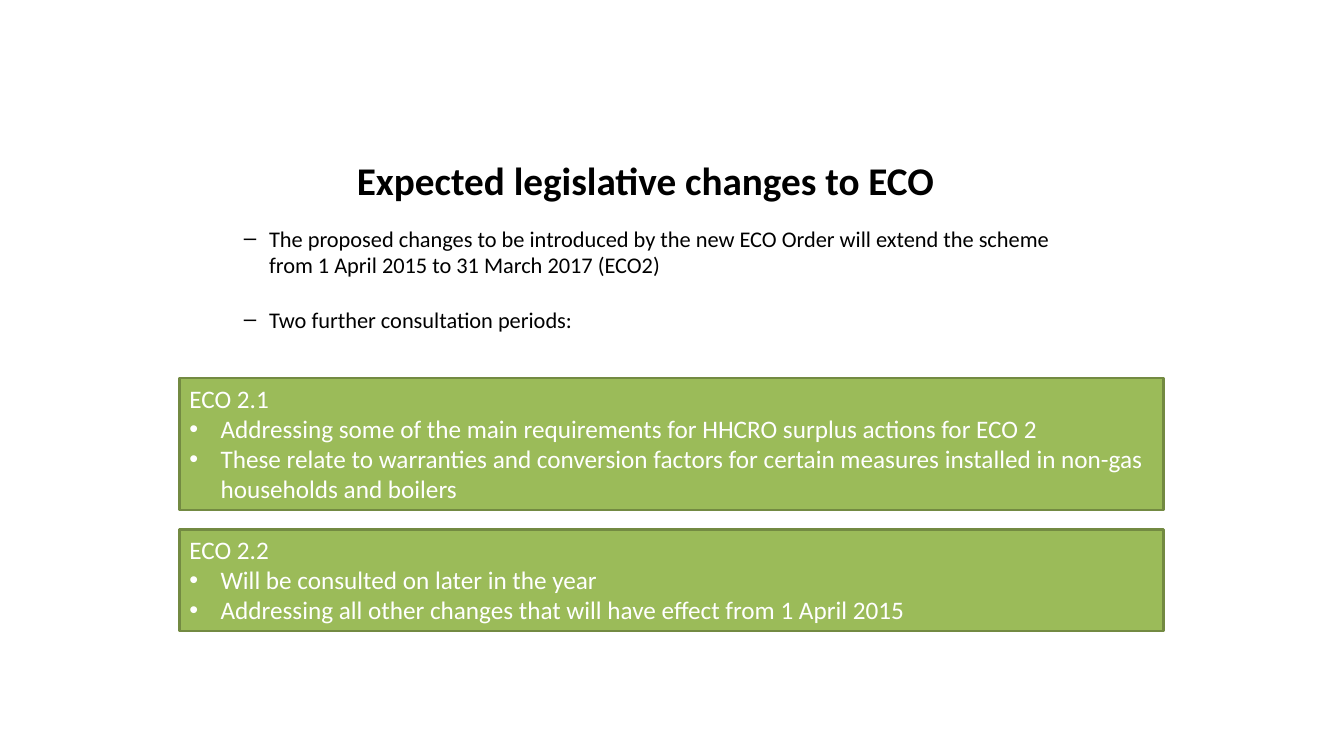
from pptx import Presentation
from pptx.dml.color import RGBColor
from pptx.enum.shapes import MSO_SHAPE as SHAPE
from pptx.enum.text import MSO_ANCHOR as ANCHOR, MSO_AUTO_SIZE as AUTO, PP_ALIGN as ALIGN
from pptx.oxml.ns import qn
from pptx.util import Inches, Pt
from lxml import etree


def rgb(value):
    return RGBColor.from_string(value)


def assign(target, values):
    for name, value in values.items():
        setattr(target, name, value)


class SlideBuilder:
    FONT = "Calibri"
    BLACK, WHITE = "000000", "FFFFFF"
    GREEN, DARK_GREEN = "9BBB59", "738A42"

    def __init__(self, prs):
        self.slide = prs.slides.add_slide(prs.slide_layouts[5])

    def place(self, sp, box):
        assign(sp, dict(zip(("left", "top", "width", "height"), map(Inches, box))))

    def paragraph(self, p, text, size, color, bold=False, bullet=None,
                  margin=0, hanging=0, align=ALIGN.LEFT, gap=0):
        pPr = p._p.get_or_add_pPr()
        pPr.set("marL", str(Inches(margin)))
        pPr.set("indent", str(-Inches(hanging)))
        assign(p, {"alignment": align, "space_before": Pt(gap)})
        if bullet:
            etree.SubElement(pPr, qn("a:buFont")).set("typeface", "Arial")
            etree.SubElement(pPr, qn("a:buChar")).set("char", bullet)
        r = p.add_run()
        r.text = text
        assign(r.font, {"name": self.FONT, "size": Pt(size), "bold": bold})
        r.font.color.rgb = rgb(color)

    def title(self, text, box):
        sp = self.slide.shapes.title
        self.place(sp, box)
        tf = sp.text_frame
        assign(tf, {"word_wrap": True, "auto_size": AUTO.NONE,
                    "vertical_anchor": ANCHOR.MIDDLE})
        self.paragraph(tf.paragraphs[0], text, 28, self.BLACK, bold=True,
                       align=ALIGN.CENTER)

    def dashes(self, items, box):
        sp = self.slide.shapes.add_textbox(*map(Inches, box))
        tf = sp.text_frame
        assign(tf, {"word_wrap": True, "auto_size": AUTO.SHAPE_TO_FIT_TEXT})
        for i, text in enumerate(items):
            p = tf.add_paragraph() if i else tf.paragraphs[0]
            self.paragraph(p, text, 16, self.BLACK, bullet="–", margin=0.75,
                           hanging=0.25, gap=19.5 if i else 0)

    def panel(self, heading, items, box):
        sp = self.slide.shapes.add_shape(SHAPE.RECTANGLE, *map(Inches, box))
        sp.shadow.inherit = False
        sp.fill.solid()
        sp.fill.fore_color.rgb = rgb(self.GREEN)
        sp.line.color.rgb = rgb(self.DARK_GREEN)
        sp.line.width = Pt(2)
        tf = sp.text_frame
        assign(tf, {"word_wrap": True, "auto_size": AUTO.SHAPE_TO_FIT_TEXT,
                    "vertical_anchor": ANCHOR.TOP})
        self.paragraph(tf.paragraphs[0], heading, 18, self.WHITE,
                       margin=0.29, hanging=0.29)
        for text in items:
            self.paragraph(tf.add_paragraph(), text, 18, self.WHITE,
                           bullet="•", margin=0.31, hanging=0.31)


def main():
    prs = Presentation()
    assign(prs, {"slide_width": Inches(13.33), "slide_height": Inches(7.5)})
    s = SlideBuilder(prs)
    s.title("Expected legislative changes to ECO", (1.9, 1.47, 9, 0.63))
    s.panel("ECO 2.2", [
        "Will be consulted on later in the year",
        "Addressing all other changes that will have effect from 1 April 2015",
    ], (1.78, 5.25, 9.76, 1.01))
    s.panel("ECO 2.1", [
        "Addressing some of the main requirements for HHCRO surplus actions for ECO 2",
        "These relate to warranties and conversion factors for certain measures "
        "installed in non-gas households and boilers",
    ], (1.78, 3.75, 9.76, 1.31))
    s.dashes([
        "The proposed changes to be introduced by the new ECO Order will extend "
        "the scheme from 1 April 2015 to 31 March 2017 (ECO2)",
        "Two further consultation periods:",
    ], (1.82, 2.18, 8.81, 1.18))
    prs.save("out.pptx")


if __name__ == "__main__":
    main()
